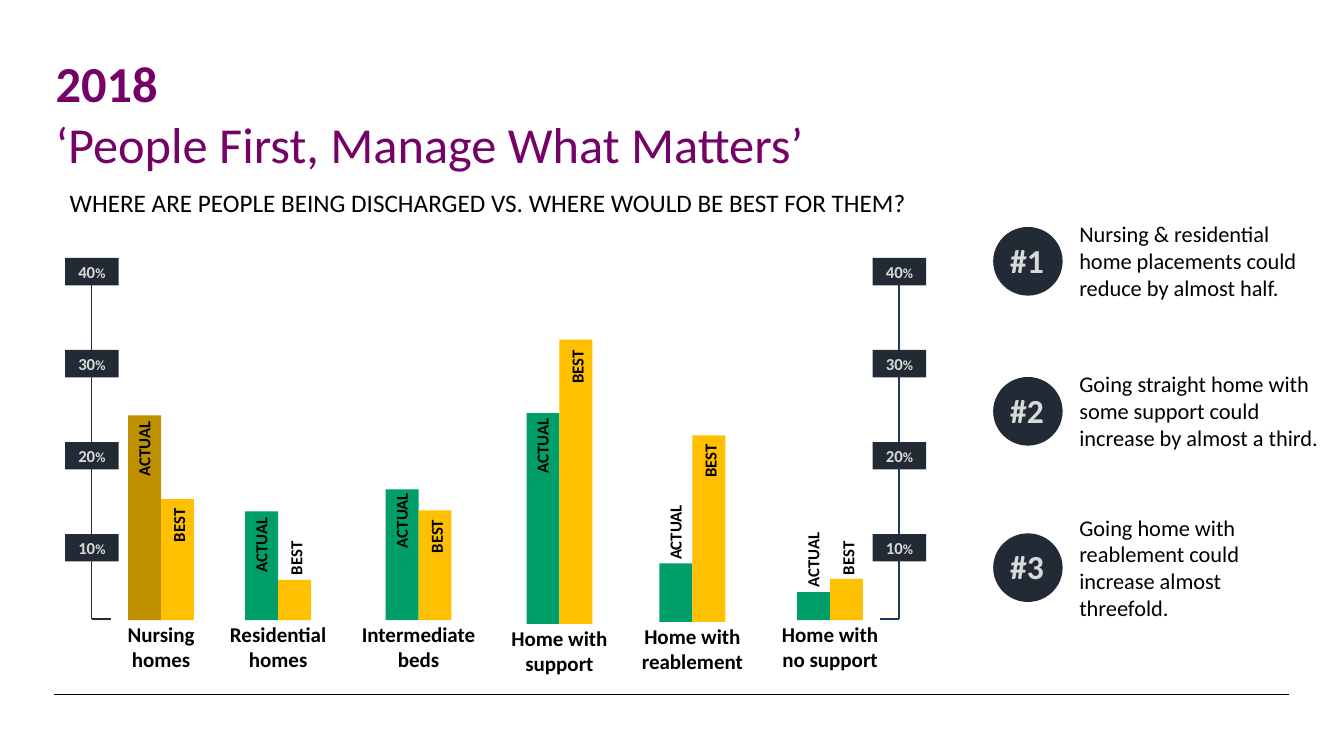
from lxml import etree
from pptx import Presentation
from pptx import util as u
from pptx.dml.color import RGBColor
from pptx.enum import shapes, text
from pptx.oxml.ns import qn

FONT = "Calibri"
BLACK, DARK, NAVY, PALE = "000000", "222A35", "203864", "D9D9D9"
PURPLE, GREEN, YELLOW, OCHRE = "750367", "009F69", "FFC000", "BF9000"
LEFT, CENTER = text.PP_ALIGN.LEFT, text.PP_ALIGN.CENTER
TOP, MIDDLE = text.MSO_ANCHOR.TOP, text.MSO_ANCHOR.MIDDLE

BAR_WIDTH = 0.83
AXIS_BOTTOM = 15.6

# name, name width, middle, base, then (height, label bottom, colour) per bar
DESTINATIONS = [
    ("Nursing\nhomes", 2.25, 4.06, 15.63, (5.16, 12.26, OCHRE), (3.05, 13.91, YELLOW)),
    ("Residential\nhomes", 2.95, 7.01, 15.63, (2.74, 14.67, GREEN), (1.02, 14.74, YELLOW)),
    ("Intermediate\nbeds", 3.4, 10.55, 15.63, (3.3, 14.06, GREEN), (2.77, 14.19, YELLOW)),
    ("Home with\nsupport", 2.97, 14.1, 15.72, (5.31, 12.18, GREEN), (7.16, 9.92, YELLOW)),
    ("Home with\nreablement", 3.1, 17.45, 15.67, (1.47, 14.36, GREEN), (4.7, 12.28, YELLOW)),
    ("Home with no support", 3.1, 20.92, 15.63, (0.71, 15.05, GREEN), (1.04, 14.74, YELLOW)),
]

# circle top, text top, text width, text height, wording
FINDINGS = [
    (5.72, 5.43, 6.58, 2.31,
     "Nursing & residential home placements could reduce by almost half."),
    (9.5, 9.2, 6.58, 2.31,
     "Going straight home with\nsome support could increase by almost a third."),
    (13.44, 12.82, 6.1, 3,
     "Going home with reablement could increase almost threefold."),
]


def color(hex_code):
    return RGBColor.from_string(hex_code)


def box(left, top, width, height):
    return [u.Cm(value) for value in (left, top, width, height)]


def write(shape, *runs, size=12, fill=BLACK, bold=False, align=LEFT,
          anchor=TOP, wrap=True, margins=None):
    """Each run is a string, or a (string, changes) pair."""
    frame = shape.text_frame
    frame.word_wrap = wrap
    frame.vertical_anchor = anchor
    if margins is not None:
        frame.margin_left = frame.margin_right = u.Cm(margins)
        frame.margin_top = frame.margin_bottom = u.Cm(margins)
    paragraph = frame.paragraphs[0]
    paragraph.alignment = align
    for item in runs:
        words, changes = (item, {}) if isinstance(item, str) else item
        for index, line in enumerate(words.split("\n")):
            if index:
                paragraph.add_line_break()
            if not line:
                continue
            run = paragraph.add_run()
            run.text = line
            run.font.name = FONT
            run.font.size = u.Pt(changes.get("size", size))
            run.font.bold = changes.get("bold", bold)
            run.font.color.rgb = color(fill)


def add_text(slide, place, *runs, rotation=0, **style):
    shape = slide.shapes.add_textbox(*box(*place))
    shape.rotation = rotation
    write(shape, *runs, **style)


def add_block(slide, place, fill, kind=shapes.MSO_SHAPE.RECTANGLE):
    shape = slide.shapes.add_shape(kind, *box(*place))
    shape.shadow.inherit = False
    shape.fill.solid()
    shape.fill.fore_color.rgb = color(fill)
    shape.line.fill.background()
    return shape


def add_line(slide, start, end, fill, width=1):
    line = slide.shapes.add_connector(
        shapes.MSO_CONNECTOR.STRAIGHT, *[u.Cm(value) for value in start + end])
    line.line.color.rgb = color(fill)
    line.line.width = u.Pt(width)
    etree.SubElement(line._element.spPr, qn("a:effectLst"))


def add_axis(slide, x, tick_end, fill):
    add_line(slide, (x, AXIS_BOTTOM), (x, 6.65), fill)
    add_line(slide, (tick_end, AXIS_BOTTOM), (x, AXIS_BOTTOM), fill)
    for index, percent in enumerate((40, 30, 20, 10)):
        mark = add_block(slide, (x - 0.67, 6.5 + 2.32 * index, 1.35, 0.69), DARK)
        write(mark, str(percent), ("%", {"size": 10}), fill=PALE, bold=True,
              align=CENTER, anchor=MIDDLE, margins=0)


def add_destination(slide, name, name_width, middle, base, actual, best):
    add_text(slide, (middle - name_width / 2, base + 0.02, name_width, 1.3), name,
             size=15, bold=True, align=CENTER, anchor=MIDDLE)
    for side, label, bar in ((-1, "ACTUAL", actual), (1, "BEST", best)):
        height, label_bottom, fill = bar
        bar_center = middle + side * BAR_WIDTH / 2
        add_block(slide, (bar_center - BAR_WIDTH / 2, base - height, BAR_WIDTH, height), fill)
        # The label box is turned about its centre to read upwards
        length, thickness = 6.15, 1.14
        label_center = middle + side * 0.44
        add_text(slide, (label_center - length / 2,
                         label_bottom - length / 2 - thickness / 2, length, thickness),
                 label, rotation=270, bold=True, anchor=MIDDLE)


def add_finding(slide, number, circle_top, text_top, width, height, words):
    add_block(slide, (25.03, circle_top, 1.75, 1.73), DARK, shapes.MSO_SHAPE.OVAL)
    add_text(slide, (25.21, circle_top + 0.2, 1.37, 1.28), f"#{number}",
             size=24, fill=PALE, bold=True, wrap=False)
    add_text(slide, (26.95, text_top, width, height), words, size=16)


def main():
    presentation = Presentation()
    presentation.slide_width, presentation.slide_height = u.Cm(33.87), u.Cm(19.05)
    slide = presentation.slides.add_slide(presentation.slide_layouts[6])

    # Title, question and footer rule
    add_line(slide, (1.37, 17.5), (32.49, 17.5), BLACK, 0.25)
    add_text(slide, (1.4, 1.32, 23.5, 2.54), ("2018\n", {"bold": True}),
             "‘People First, Manage What Matters’", size=36, fill=PURPLE, margins=0)
    add_text(slide, (1.4, 4.6, 21.79, 1.8),
             "WHERE ARE PEOPLE BEING DISCHARGED VS. WHERE WOULD BE BEST FOR THEM?",
             size=18, align=CENTER, wrap=False)

    # Bars between the two percentage axes
    add_axis(slide, 2.31, 2.79, DARK)
    add_axis(slide, 22.66, 22.17, NAVY)
    for destination in DESTINATIONS:
        add_destination(slide, *destination)

    # Numbered findings
    for number, finding in enumerate(FINDINGS, 1):
        add_finding(slide, number, *finding)

    presentation.save("out.pptx")


if __name__ == "__main__":
    main()
